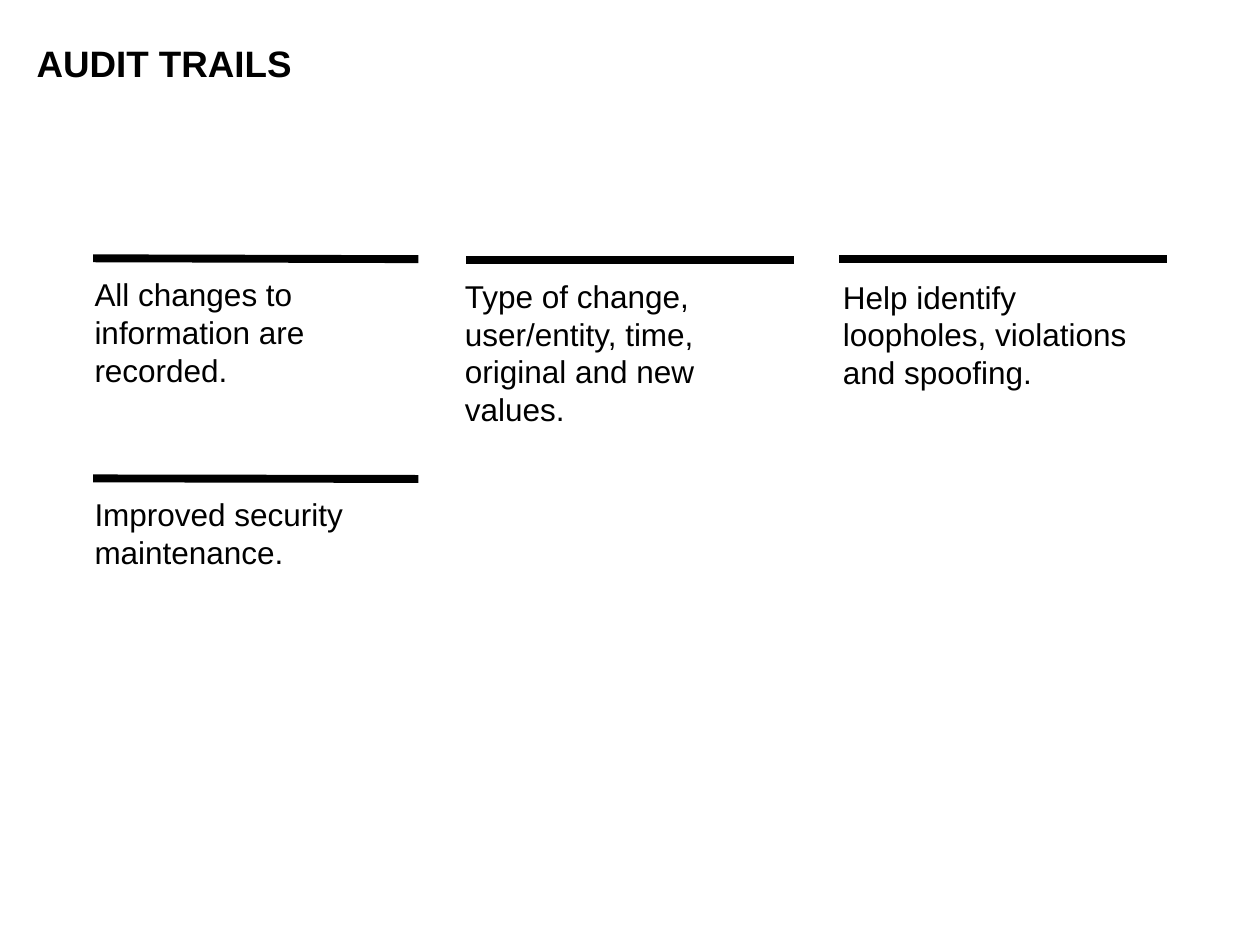
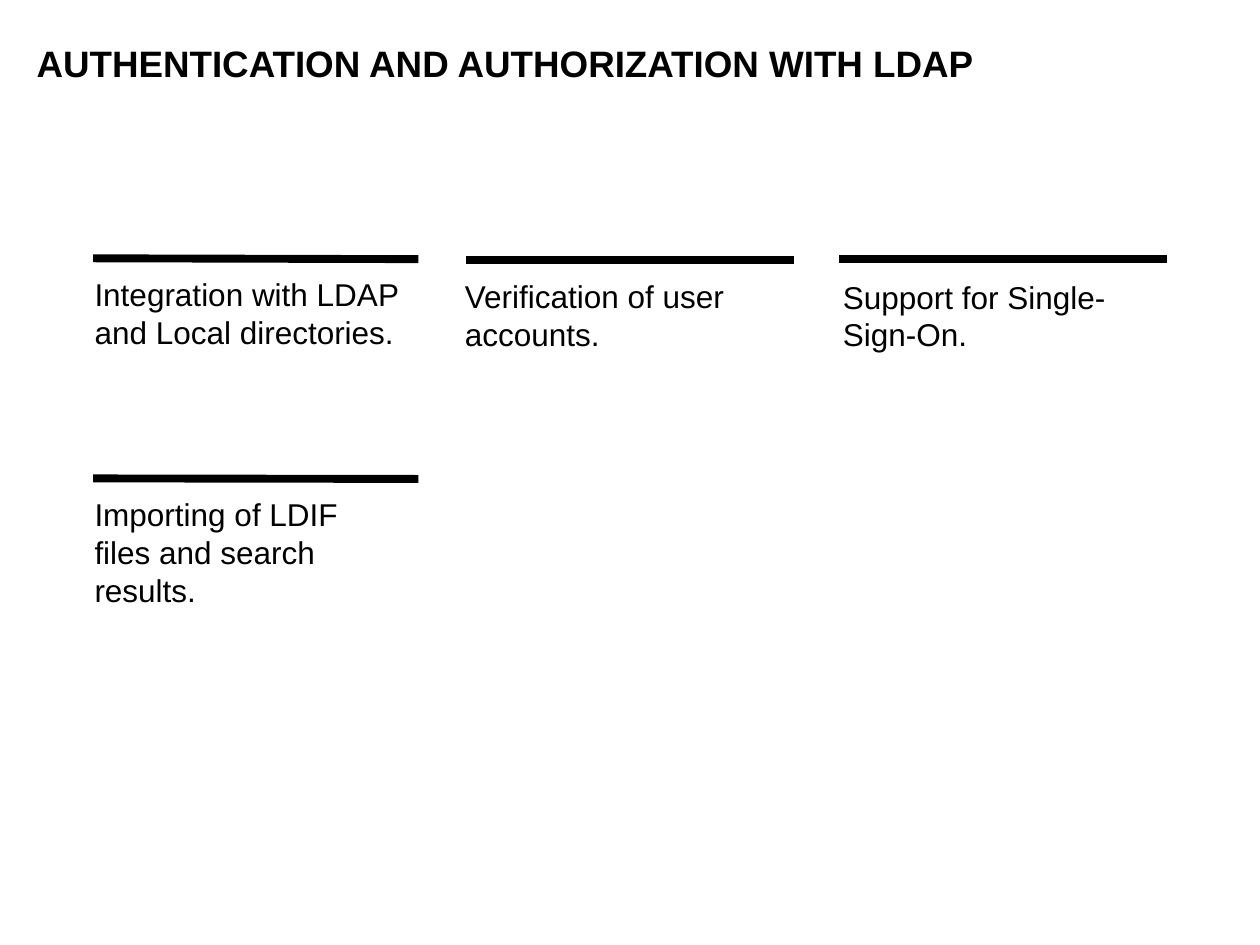
import pptx
import pptx.util
import pptx.dml.color
import pptx.enum.shapes
import pptx.enum.text
import pptx.oxml.ns
import lxml.etree

Pt = pptx.util.Pt
BLACK = pptx.dml.color.RGBColor(0, 0, 0)
WHITE = pptx.dml.color.RGBColor(255, 255, 255)
FONT = "Arial"
PITCH = 21.6  # line pitch of the notes
RULE_LEFT, RULE_STEP = 53.28, 213.12

# Each place: column, rule top, rule length, rule drop, note left, note top, note width
PLACES = [
    (0, 147.6, 185.76, 0.5, 54, 155.9, 186.48),
    (1, 148.5, 187.2, 0, 265.68, 156.7, 187.2),
    (2, 148, 187.2, 0, 481.68, 157.2, 185.04),
    (0, 273.4, 185.76, 0.3, 54, 281.52, 178.56),
]

# Each note: text, number of lines
SLIDES = [
    ("AUDIT TRAILS", [
        ("All changes to information are recorded.", 3),
        ("Type of change, user/entity, time, original and new values.", 3),
        ("Help identify loopholes, violations and spoofing.", 3),
        ("Improved security maintenance.", 2),
    ]),
    ("AUTHENTICATION AND AUTHORIZATION WITH LDAP", [
        ("Integration with LDAP and Local directories.", 2),
        ("Verification of user accounts.", 2),
        ("Support for Single-Sign-On.", 2),
        ("Importing of LDIF files and search results.", 3),
    ]),
]


class Deck:
    """Holds the shared style and the current slide."""

    def __init__(self):
        self.prs = pptx.Presentation()
        self.prs.slide_width, self.prs.slide_height = Pt(720), Pt(540)
        self.slide = None

    def start(self, title):
        self.slide = self.prs.slides.add_slide(self.prs.slide_layouts[6])
        fill = self.slide.background.fill
        fill.solid()
        fill.fore_color.rgb = WHITE
        para = self.text(self.slide.shapes, title, (20.88, 22.32, 606.24, 30.24),
                         (0, 3.6, 0, 3.6), 21, 0.9, True)
        para.font.bold = True

    def text(self, shapes, words, place, insets, size, spacing, middle=False):
        box = shapes.add_textbox(*map(Pt, place))
        frame = box.text_frame
        frame.word_wrap = True
        frame.auto_size = pptx.enum.text.MSO_AUTO_SIZE.SHAPE_TO_FIT_TEXT
        anchor = pptx.enum.text.MSO_ANCHOR
        frame.vertical_anchor = anchor.MIDDLE if middle else anchor.TOP
        (frame.margin_left, frame.margin_top,
         frame.margin_right, frame.margin_bottom) = map(Pt, insets)
        para = frame.paragraphs[0]
        para.text = words
        para.line_spacing = spacing
        para.font.name = FONT
        para.font.size = Pt(size)
        para.font.color.rgb = BLACK
        return para

    def rule(self, shapes, left, top, length, drop):
        line = shapes.add_connector(
            pptx.enum.shapes.MSO_CONNECTOR.STRAIGHT,
            Pt(left), Pt(top), Pt(left + length), Pt(top + drop))
        line.line.color.rgb = BLACK
        line.line.width = Pt(4.5)
        props = line.element.spPr
        lxml.etree.SubElement(props, pptx.oxml.ns.qn("a:effectLst"))

    def note(self, words, lines, place):
        """Groups a note with the heavy rule above it."""
        col, top, length, drop, left, note_top, width = place
        shapes = self.slide.shapes.add_group_shape().shapes
        self.text(shapes, words, (left, note_top, width, lines * PITCH + 6.48),
                  (0, 1.44, 9.36, 5.04), 18, Pt(PITCH))
        self.rule(shapes, RULE_LEFT + col * RULE_STEP, top, length, drop)


def main():
    deck = Deck()
    for title, notes in SLIDES:
        deck.start(title)
        for (words, lines), place in zip(notes, PLACES):
            deck.note(words, lines, place)
    deck.prs.save("out.pptx")


if __name__ == "__main__":
    main()
